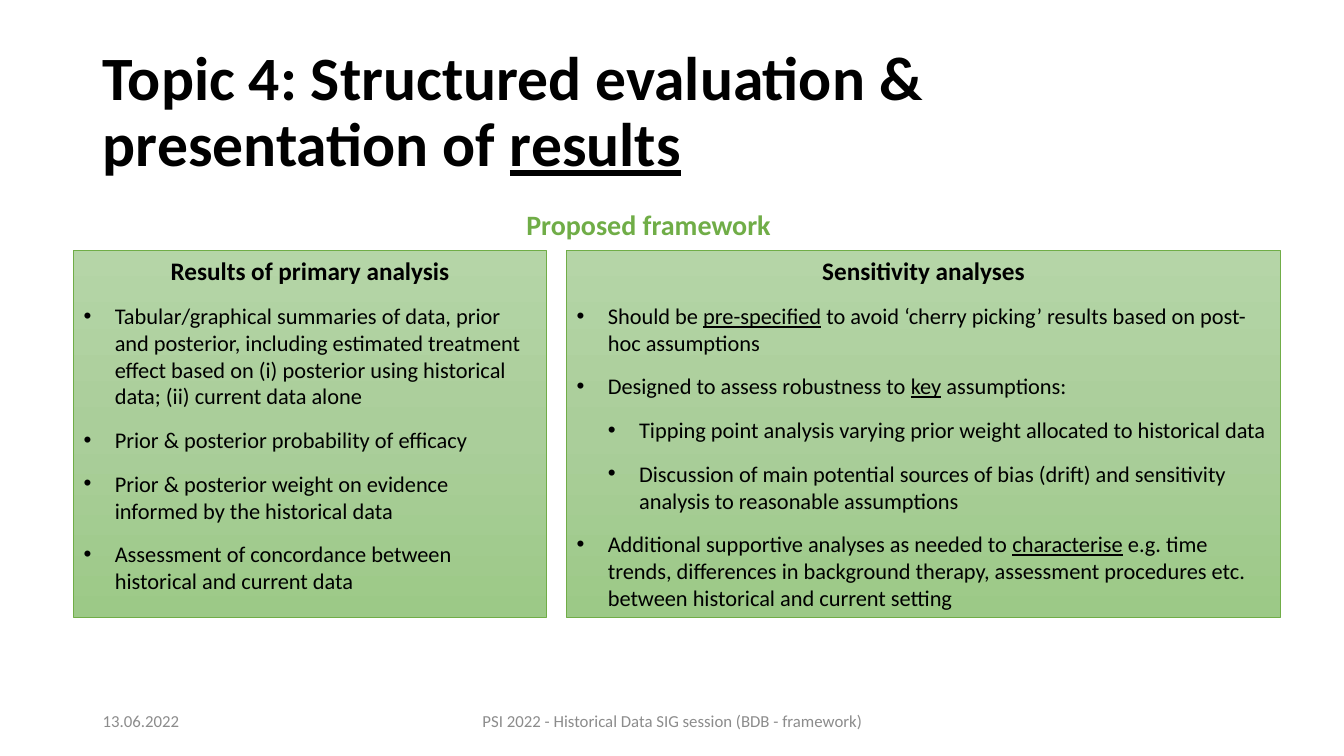
import copy

import pptx
import pptx.dml.color
import pptx.enum.dml
import pptx.enum.shapes
import pptx.enum.text
import pptx.oxml
import pptx.oxml.ns
import pptx.util
from lxml import etree

RGB = pptx.dml.color.RGBColor
ALIGN = pptx.enum.text.PP_ALIGN
ANCHOR = pptx.enum.text.MSO_ANCHOR
Pt = pptx.util.Pt

BLACK = RGB(0x00, 0x00, 0x00)
GRAY = RGB(0x8C, 0x8C, 0x8C)
GREEN = RGB(0x70, 0xAD, 0x47)
SHADES = [
    RGB(0xB5, 0xD5, 0xA7),
    RGB(0xAA, 0xCE, 0x9A),
    RGB(0x9C, 0xC9, 0x87),
]
FONT = "Calibri"
SLIDE = (0, 0, pptx.util.Inches(13.33), pptx.util.Inches(7.5))
INDENT = pptx.util.Inches(0.31)

PRIMARY = [
    (1, "Tabular/graphical summaries of data, prior and posterior, including "
        "estimated treatment effect based on (i) posterior using historical "
        "data; (ii) current data alone"),
    (1, "Prior & posterior probability of efficacy"),
    (1, "Prior & posterior weight on evidence informed by the historical data"),
    (1, "Assessment of concordance between historical and current data"),
]
CHECKS = [
    (1, "Should be _pre-specified_ to avoid ‘cherry picking’ results based on "
        "post-hoc assumptions"),
    (1, "Designed to assess robustness to _key_ assumptions:"),
    (2, "Tipping point analysis varying prior weight allocated to historical data"),
    (2, "Discussion of main potential sources of bias (drift) and sensitivity "
        "analysis to reasonable assumptions"),
    (1, "Additional supportive analyses as needed to _characterise_ e.g. time "
        "trends, differences in background therapy, assessment procedures etc. "
        "between historical and current setting"),
]


def part(box, x, y, w, h):
    """Return the part of a box given by percentages of its size."""
    left, top, width, height = box
    return (
        int(left + width * x / 100),
        int(top + height * y / 100),
        int(width * w / 100),
        int(height * h / 100),
    )


def write(para, text, size, color=BLACK, bold=False, align=ALIGN.LEFT):
    """Fill a paragraph, underlining the words set between underscores."""
    para.alignment = align
    font = para.font
    font.name, font.size, font.bold = FONT, Pt(size), bold
    font.color.rgb = color
    for i, piece in enumerate(text.split("_")):
        if piece:
            run = para.add_run()
            run.text = piece
            if i % 2:
                run.font.underline = True


def bullet(para, level):
    """Give a paragraph a hanging bullet at the given level."""
    para.space_before = Pt(12)
    props = para._p.get_or_add_pPr()
    props.set("marL", str(INDENT * level))
    props.set("indent", str(-INDENT))
    for tag, key, value in (("a:buFont", "typeface", "Arial"),
                            ("a:buChar", "char", "•")):
        etree.SubElement(props, pptx.oxml.ns.qn(tag)).set(key, value)


def title(slide, box, text):
    """Place the slide title in its box."""
    head = slide.shapes.title
    head.left, head.top, head.width, head.height = box
    frame = head.text_frame
    frame.auto_size = pptx.enum.text.MSO_AUTO_SIZE.NONE
    frame.vertical_anchor = ANCHOR.MIDDLE
    para = frame.paragraphs[0]
    para.line_spacing = 0.9
    write(para, text, 44, bold=True)


def label(slide, box, text, size, color, anchor=ANCHOR.MIDDLE, **style):
    """Place one line of text in a box."""
    frame = slide.shapes.add_textbox(*box).text_frame
    frame.word_wrap = True
    frame.vertical_anchor = anchor
    write(frame.paragraphs[0], text, size, color, **style)


def shade(fill):
    """Fill with the green gradient from top to bottom."""
    fill.gradient()
    fill.gradient_angle = 270
    first = fill.gradient_stops[0]._gs
    first.addnext(copy.deepcopy(first))
    for i, (stop, color) in enumerate(zip(fill.gradient_stops, SHADES)):
        stop.position = i / 2
        stop.color.rgb = color


def panel(slide, box, head, items):
    """Draw a green panel with a heading and bullets."""
    rect = slide.shapes.add_shape(
        pptx.enum.shapes.MSO_SHAPE.RECTANGLE, *box)
    rect.shadow.inherit = False
    shade(rect.fill)
    rect.line.color.rgb = GREEN
    rect.line.width = Pt(0.5)
    frame = rect.text_frame
    frame.word_wrap = True
    frame.vertical_anchor = ANCHOR.TOP
    write(frame.paragraphs[0], head, 18, bold=True, align=ALIGN.CENTER)
    for level, text in items:
        para = frame.add_paragraph()
        bullet(para, level)
        write(para, text, 16)


def framework(slide, box):
    """Draw the caption and the two panels below it."""
    panel(slide, part(box, 0, 11.44, 39.18, 88.56),
          "Results of primary analysis", PRIMARY)
    label(slide, part(box, 36.68, 0, 25.65, 10.71), "Proposed framework",
          20, GREEN, ANCHOR.TOP, bold=True)
    panel(slide, part(box, 40.85, 11.44, 59.15, 88.56),
          "Sensitivity analyses", CHECKS)


def footer(slide, box):
    """Place the session name and the date along the foot."""
    label(slide, part(box, 33.16, 0, 33.76, 100),
          "PSI 2022 - Historical Data SIG session (BDB - framework)",
          12, GRAY, align=ALIGN.CENTER)
    label(slide, part(box, 6.9, 0, 22.5, 100), "13.06.2022", 12, GRAY)


def main():
    """Build the slide and save it."""
    deck = pptx.Presentation()
    deck.slide_width, deck.slide_height = SLIDE[2:]
    slide = deck.slides.add_slide(deck.slide_layouts[5])
    title(slide, part(SLIDE, 6.9, 5.33, 86.25, 19.33),
          "Topic 4: Structured evaluation & presentation of _results_")
    footer(slide, part(SLIDE, 0, 92.67, 100, 5.33))
    framework(slide, part(SLIDE, 5.48, 26.8, 89.8, 54.8))
    deck.save("out.pptx")


if __name__ == "__main__":
    main()
